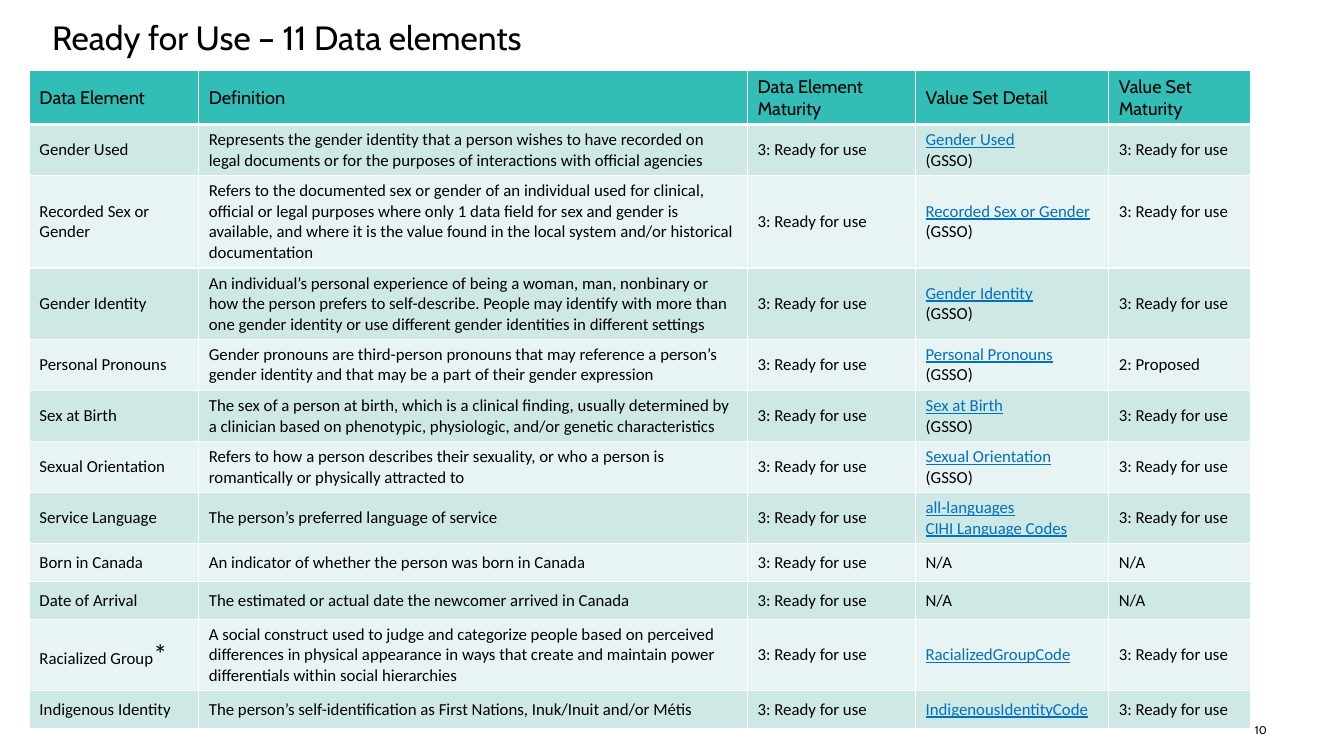
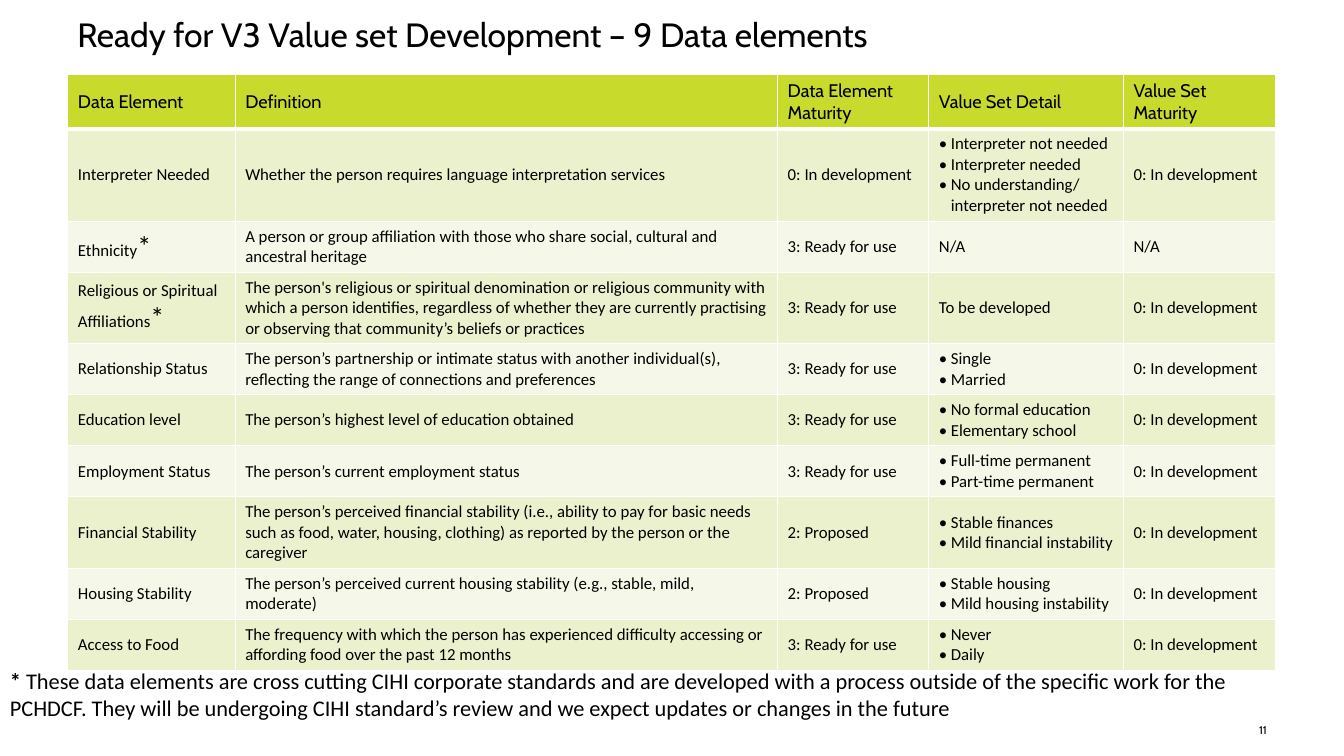
from lxml.etree import SubElement
from pptx import Presentation
from pptx.dml.color import RGBColor
from pptx.enum.text import MSO_ANCHOR as ANCHOR, MSO_AUTO_SIZE as AUTO, PP_ALIGN as ALIGN
from pptx.oxml.ns import qn
from pptx.util import Pt

BLACK = RGBColor(0x00, 0x00, 0x00)
LINK_BLUE = RGBColor(0x00, 0x70, 0xC0)
TEAL = RGBColor(0x33, 0xBD, 0xB7)
TEAL_MID = RGBColor(0xCE, 0xE8, 0xE6)
TEAL_PALE = RGBColor(0xE8, 0xF4, 0xF3)
LIME = RGBColor(0xC8, 0xDA, 0x2B)
LIME_MID = RGBColor(0xEB, 0xF1, 0xCD)
LIME_PALE = RGBColor(0xF5, 0xF8, 0xE8)
HEAD_FONT, BODY_FONT = "Cabin", "Calibri"

HEADER = ("Data Element", "Definition", "Data Element Maturity",
          "Value Set Detail", "Value Set Maturity")
READY, PROPOSED, IN_DEV = "3: Ready for use", "2: Proposed", "0: In development"
LINK, BULLET, PLAIN = "link", "bullet", "plain"
GSSO = (PLAIN, "(GSSO)")
NA = [(PLAIN, "N/A")]

# Row: height, element, definition, maturity, value set detail, value set maturity
READY_ROWS = [
    (36.5, "Gender Used",
     "Represents the gender identity that a person wishes to have recorded on legal documents "
     "or for the purposes of interactions with official agencies",
     READY, [(LINK, "Gender Used"), GSSO], READY),
    (66, "Recorded Sex or Gender",
     "Refers to the documented sex or gender of an individual used for clinical, official or "
     "legal purposes where only 1 data field for sex and gender is available, and where it is "
     "the value found in the local system and/or historical documentation",
     READY, [(LINK, "Recorded Sex or Gender"), GSSO], READY),
    (51, "Gender Identity",
     "An individual’s personal experience of being a woman, man, nonbinary or how the person "
     "prefers to self-describe. People may identify with more than one gender identity or use "
     "different gender identities in different settings",
     READY, [(LINK, "Gender Identity"), GSSO], READY),
    (36.5, "Personal Pronouns",
     "Gender pronouns are third-person pronouns that may reference a person’s gender identity "
     "and that may be a part of their gender expression",
     READY, [(LINK, "Personal Pronouns"), GSSO], PROPOSED),
    (36.5, "Sex at Birth",
     "The sex of a person at birth, which is a clinical finding, usually determined by a "
     "clinician based on phenotypic, physiologic, and/or genetic characteristics",
     READY, [(LINK, "Sex at Birth"), GSSO], READY),
    (36.5, "Sexual Orientation",
     "Refers to how a person describes their sexuality, or who a person is romantically or "
     "physically attracted to",
     READY, [(LINK, "Sexual Orientation"), GSSO], READY),
    (36.5, "Service Language", "The person’s preferred language of service",
     READY, [(LINK, "all-languages"), (LINK, "CIHI Language Codes")], READY),
    (27, "Born in Canada", "An indicator of whether the person was born in Canada",
     READY, NA, "N/A"),
    (27, "Date of Arrival", "The estimated or actual date the newcomer arrived in Canada",
     READY, NA, "N/A"),
    (51, "Racialized Group*",
     "A social construct used to judge and categorize people based on perceived differences in "
     "physical appearance in ways that create and maintain power differentials within social "
     "hierarchies",
     READY, [(LINK, "RacializedGroupCode")], READY),
    (27, "Indigenous Identity",
     "The person’s self-identification as First Nations, Inuk/Inuit and/or Métis",
     READY, [(LINK, "IndigenousIdentityCode")], READY),
]
V3_ROWS = [
    (66, "Interpreter Needed", "Whether the person requires language interpretation services",
     IN_DEV, [(BULLET, "Interpreter not needed"), (BULLET, "Interpreter needed"),
              (BULLET, "No understanding/ interpreter not needed")], IN_DEV),
    (36.5, "Ethnicity*",
     "A person or group affiliation with those who share social, cultural and ancestral heritage",
     READY, NA, "N/A"),
    (51, "Religious or Spiritual Affiliations*",
     "The person's religious or spiritual denomination or religious community with which a "
     "person identifies, regardless of whether they are currently practising or observing that "
     "community’s beliefs or practices",
     READY, [(PLAIN, "To be developed")], IN_DEV),
    (36.5, "Relationship Status",
     "The person’s partnership or intimate status with another individual(s), reflecting the "
     "range of connections and preferences",
     READY, [(BULLET, "Single"), (BULLET, "Married")], IN_DEV),
    (36.5, "Education level", "The person’s highest level of education obtained",
     READY, [(BULLET, "No formal education"), (BULLET, "Elementary school")], IN_DEV),
    (36.5, "Employment Status", "The person’s current employment status",
     READY, [(BULLET, "Full-time permanent"), (BULLET, "Part-time permanent")], IN_DEV),
    (51, "Financial Stability",
     "The person’s perceived financial stability (i.e., ability to pay for basic needs such as "
     "food, water, housing, clothing) as reported by the person or the caregiver",
     PROPOSED, [(BULLET, "Stable finances"), (BULLET, "Mild financial instability")], IN_DEV),
    (36.5, "Housing Stability",
     "The person’s perceived current housing stability (e.g., stable, mild, moderate)",
     PROPOSED, [(BULLET, "Stable housing"), (BULLET, "Mild housing instability")], IN_DEV),
    (36.5, "Access to Food",
     "The frequency with which the person has experienced difficulty accessing or affording "
     "food over the past 12 months",
     READY, [(BULLET, "Never"), (BULLET, "Daily")], IN_DEV),
]

# Slide: number, title, title position, table position, column widths, colours, rows
SLIDES = [
    (10, "Ready for Use – 11 Data elements", (30, 8.5), (21, 50.5),
     (121, 392, 120, 138, 101.5), (TEAL, TEAL_MID, TEAL_PALE), READY_ROWS),
    (11, "Ready for V3 Value set Development – 9 Data elements", (48, 6.5), (48.5, 53.5),
     (119.5, 387.5, 108, 139, 108.5), (LIME, LIME_MID, LIME_PALE), V3_ROWS),
]


def add_run(p, text, size, font=BODY_FONT, color=BLACK, bold=False, underline=False):
    r = p.add_run()
    r.text = text
    r.font.size, r.font.name = Pt(size), font
    r.font.bold, r.font.underline = bold, underline
    r.font.color.rgb = color


def style_cell(cell, fill, bottom_width=1):
    """Give a cell white borders, a solid fill and middle anchoring."""
    tc_pr = cell._tc.get_or_add_tcPr()
    for side in ("lnL", "lnR", "lnT", "lnB"):
        width = bottom_width if side == "lnB" else 1
        ln = SubElement(tc_pr, qn(f"a:{side}"), w=str(Pt(width)))
        SubElement(SubElement(ln, qn("a:solidFill")), qn("a:srgbClr"), val="FFFFFF")
    cell.fill.solid()
    cell.fill.fore_color.rgb = fill
    cell.vertical_anchor = ANCHOR.MIDDLE


prs = Presentation()
prs.slide_width, prs.slide_height = Pt(960), Pt(540)

for number, title, title_at, table_at, widths, colors, rows in SLIDES:
    s = prs.slides.add_slide(prs.slide_layouts[5])

    sp = s.shapes.title
    sp.left, sp.top = map(Pt, title_at)
    sp.width, sp.height = Pt(863), Pt(36)
    tf = sp.text_frame
    tf.word_wrap, tf.auto_size, tf.vertical_anchor = True, AUTO.NONE, ANCHOR.BOTTOM
    p = tf.paragraphs[0]
    p.alignment, p.line_spacing = ALIGN.LEFT, 0.9
    add_run(p, title, 24, HEAD_FONT)

    sp = s.shapes.add_textbox(Pt(859.5), Pt(517), Pt(45.5), Pt(9.5))
    tf = sp.text_frame
    tf.margin_left = tf.margin_right = tf.margin_top = tf.margin_bottom = 0
    tf.word_wrap, tf.vertical_anchor = True, ANCHOR.MIDDLE
    p = tf.paragraphs[0]
    p.alignment = ALIGN.RIGHT
    add_run(p, str(number), 8, HEAD_FONT)

    heights = [38.5] + [row[0] for row in rows]
    table = s.shapes.add_table(len(heights), len(HEADER), *map(Pt, table_at),
                               Pt(sum(widths)), Pt(sum(heights))).table
    for col, width in zip(table.columns, widths):
        col.width = Pt(width)
    for row, height in zip(table.rows, heights):
        row.height = Pt(height)

    head_fill, *band_fills = colors
    for c, label in enumerate(HEADER):
        cell = table.cell(0, c)
        style_cell(cell, head_fill, bottom_width=3)
        add_run(cell.text_frame.paragraphs[0], label, 13, HEAD_FONT)

    for i, (_, *values) in enumerate(rows):
        for c, value in enumerate(values):
            cell = table.cell(i + 1, c)
            style_cell(cell, band_fills[i % 2])
            tf = cell.text_frame
            lines = value if isinstance(value, list) else [(PLAIN, value)]
            for n, (kind, text) in enumerate(lines):
                p = tf.add_paragraph() if n else tf.paragraphs[0]
                if kind == BULLET:
                    p_pr = p._p.get_or_add_pPr()
                    p_pr.set("marL", str(Pt(8.5)))
                    p_pr.set("indent", str(-Pt(8.5)))
                    SubElement(p_pr, qn("a:buFont"), typeface=BODY_FONT)
                    SubElement(p_pr, qn("a:buChar"), char="•")
                is_link = kind == LINK
                add_run(p, text.rstrip("*"), 12, color=LINK_BLUE if is_link else BLACK,
                        underline=is_link)
                if text.endswith("*"):
                    add_run(p, "*", 20)
        if values[0] == "Recorded Sex or Gender":
            table.cell(i + 1, 4).margin_bottom = Pt(18)

# Footnote for the starred elements, on the last slide
sp = s.shapes.add_textbox(0, Pt(473), Pt(893), Pt(46))
tf = sp.text_frame
tf.word_wrap = True
p = tf.paragraphs[0]
add_run(p, "*", 16, bold=True)
add_run(p, " These data elements are cross cutting CIHI corporate standards and are developed "
           "with a process outside of the specific work for the PCHDCF. They will be undergoing "
           "CIHI standard’s review and we expect updates or changes in the future", 16)

prs.save("out.pptx")
